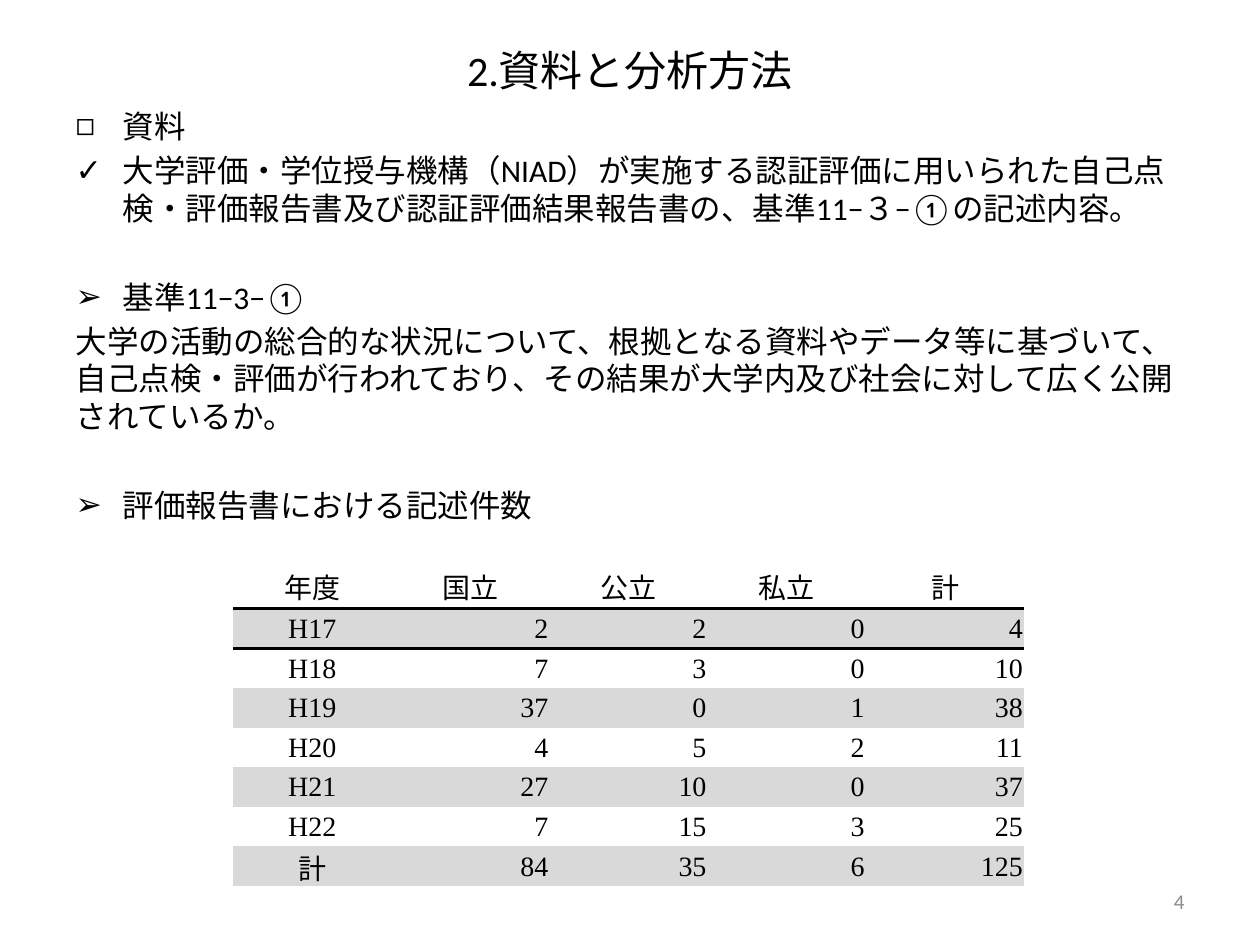
from lxml.etree import SubElement
from pptx import Presentation
from pptx.dml.color import RGBColor
from pptx.enum.lang import MSO_LANGUAGE_ID as Language
from pptx.enum.text import MSO_ANCHOR as Anchor, MSO_AUTO_SIZE as AutoSize, PP_ALIGN as Align
from pptx.oxml.ns import qn
from pptx.util import Pt

BLACK, GRAY, BAND = "000000", "8C8C8C", "D9D9D9"
PLAIN_TABLE_STYLE = "{2D5ABB26-0587-4C30-8999-92F81FD0307C}"
INDENT = 27
SECTION_GAP = 29

# bullet, text, font, space before (None keeps the template's spacing)
BODY = [
    ("◻", "資料", "Calibri", None),
    ("✓", "大学評価・学位授与機構（NIAD）が実施する認証評価に用いられた自己点検・評価報告書"
          "及び認証評価結果報告書の、基準11−３−①の記述内容。", "Calibri", None),
    ("➢", "基準11−3−①", "Calibri", SECTION_GAP),
    (None, "大学の活動の総合的な状況について、根拠となる資料やデータ等に基づいて、"
           "自己点検・評価が行われており、その結果が大学内及び社会に対して広く公開されているか。",
     "Arial", None),
    ("➢", "評価報告書における記述件数", "Calibri", SECTION_GAP),
]

COUNTS = [
    ("年度", "国立", "公立", "私立", "計"),
    ("H17", 2, 2, 0, 4),
    ("H18", 7, 3, 0, 10),
    ("H19", 37, 0, 1, 38),
    ("H20", 4, 5, 2, 11),
    ("H21", 27, 10, 0, 37),
    ("H22", 7, 15, 3, 25),
    ("計", 84, 35, 6, 125),
]


def color(value):
    return RGBColor.from_string(value)


def set_attributes(target, values):
    for name, value in values.items():
        setattr(target, name, value)


def place(shape, left, top, width, height):
    set_attributes(shape, {"left": Pt(left), "top": Pt(top),
                           "width": Pt(width), "height": Pt(height)})


def format_font(font, name, size, hex_color=BLACK):
    set_attributes(font, {"name": name, "size": Pt(size), "bold": False,
                          "language_id": Language.JAPANESE})
    font.color.rgb = color(hex_color)


def write(paragraph, text, name, size, align=None):
    run = paragraph.add_run()
    run.text = text
    format_font(run.font, name, size)
    # East Asian characters follow the same font
    SubElement(run.font._element, qn("a:ea"), typeface=name)
    paragraph.alignment = align


def set_bullet(paragraph, bullet):
    properties = paragraph._p.get_or_add_pPr()
    indent = Pt(INDENT) if bullet else 0
    properties.set("marL", str(indent))
    properties.set("indent", str(-indent))
    if bullet:
        SubElement(properties, qn("a:buChar"), char=bullet)
    else:
        SubElement(properties, qn("a:buNone"))


def add_title(slide, text):
    title = slide.shapes.title
    place(title, 36, 21.6, 648, 36)
    set_attributes(title.text_frame, {"auto_size": AutoSize.NONE,
                                      "vertical_anchor": Anchor.MIDDLE})
    write(title.text_frame.paragraphs[0], text, "Calibri", 24, Align.CENTER)


def add_body(slide, items):
    body = slide.placeholders[1]
    place(body, 36, 57.6, 648, 461.5)
    frame = body.text_frame
    frame.auto_size = AutoSize.NONE
    for index, (bullet, text, font, gap) in enumerate(items):
        paragraph = frame.add_paragraph() if index else frame.paragraphs[0]
        write(paragraph, text, font, 18)
        if gap:
            paragraph.space_before = Pt(gap)
        set_bullet(paragraph, bullet)


def set_border(cell, side, width):
    line = SubElement(cell._tc.get_or_add_tcPr(), qn(f"a:{side}"), w=str(Pt(width)))
    fill = SubElement(line, qn("a:solidFill"))
    SubElement(fill, qn("a:srgbClr"), val=BLACK)


def format_cell(cell, value, row, column):
    set_attributes(cell, {"margin_left": Pt(0.75), "margin_right": Pt(0.75),
                          "margin_top": Pt(0.75), "margin_bottom": 0,
                          "vertical_anchor": Anchor.MIDDLE})
    # Rule between the header and the first year
    if row < 2:
        set_border(cell, "lnT" if row else "lnB", 2)
    if row % 2:
        cell.fill.solid()
        cell.fill.fore_color.rgb = color(BAND)
    else:
        cell.fill.background()
    centered = row == 0 or column == 0
    japanese = row == 0 or value == "計"
    write(cell.text_frame.paragraphs[0], str(value),
          "Noto Sans CJK JP" if japanese else "Times New Roman", 16,
          Align.CENTER if centered else Align.RIGHT)


def add_count_table(slide, rows):
    frame = slide.shapes.add_table(len(rows), len(rows[0]),
                                   Pt(133.2), Pt(321.2), Pt(452), Pt(185))
    table = frame.table
    set_attributes(table, {"first_row": False, "horz_banding": False})
    table._tbl.tblPr.find(qn("a:tableStyleId")).text = PLAIN_TABLE_STYLE
    for column in table.columns:
        column.width = Pt(90.4)
    for row, values in enumerate(rows):
        table.rows[row].height = Pt(22.6 if row else 26.8)
        for column, value in enumerate(values):
            format_cell(table.cell(row, column), value, row, column)


def add_slide_number(slide, number):
    box = slide.shapes.add_textbox(Pt(516), Pt(500.5), Pt(168), Pt(28.8))
    set_attributes(box.text_frame, {"word_wrap": True, "vertical_anchor": Anchor.MIDDLE})
    paragraph = box.text_frame.paragraphs[0]
    paragraph.alignment = Align.RIGHT
    run = paragraph.add_run()
    run.text = number
    format_font(run.font, "Calibri", 12, GRAY)


def main():
    presentation = Presentation()
    set_attributes(presentation, {"slide_width": Pt(720), "slide_height": Pt(540)})
    slide = presentation.slides.add_slide(presentation.slide_layouts[1])
    add_body(slide, BODY)
    add_title(slide, "2.資料と分析方法")
    add_slide_number(slide, "4")
    add_count_table(slide, COUNTS)
    presentation.save("out.pptx")


if __name__ == "__main__":
    main()
